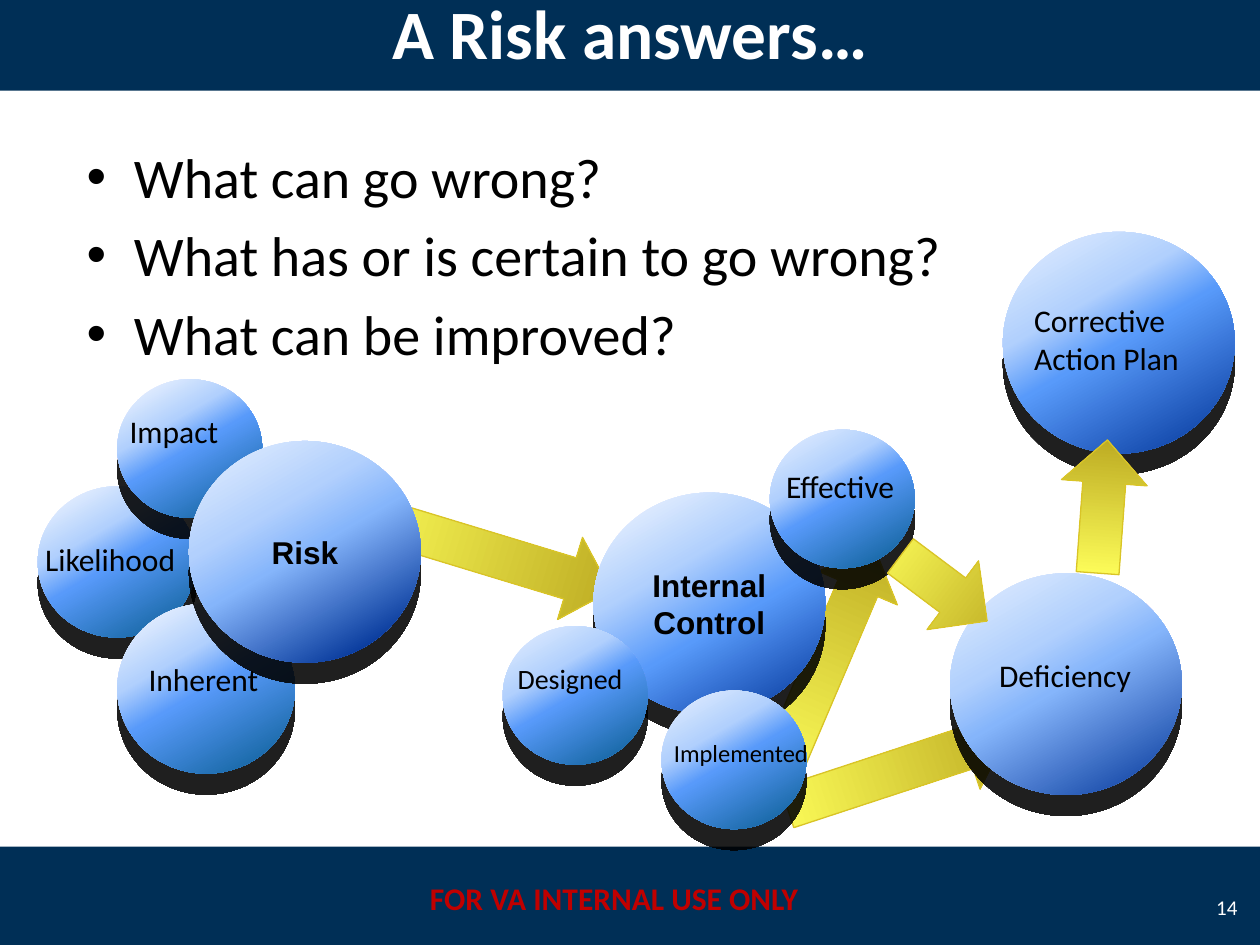
from dataclasses import dataclass

from lxml.etree import SubElement as Sub
from pptx import Presentation
from pptx.dml.color import RGBColor as RGB
from pptx.enum.shapes import MSO_SHAPE as Form
from pptx.enum.text import MSO_ANCHOR as Anchor, PP_ALIGN as Align
from pptx.oxml.ns import qn
from pptx.util import Pt


@dataclass(frozen=True)
class Theme:
    navy: str = "002F56"
    white: str = "FFFFFF"
    black: str = "000000"
    red: str = "C00000"
    edge: str = "D9C427"
    gold: tuple = ((0, "FFFF5B"), (100, "BAA820"))
    teal: tuple = ((6, "ECF3FE"), (33, "B1D0FD"), (50, "589AFA"), (100, "075B8F"))
    sky: tuple = ((6, "DEEBFE"), (33, "B1D0FD"), (50, "589AFA"), (100, "075B8F"))
    risk: tuple = ((6, "DEEBFE"), (33, "B2D0FD"), (50, "85B5FB"), (90, "003296"))
    guard: tuple = ((5, "ECF3FE"), (34, "B1D0FD"), (58, "589AFA"), (100, "003296"))
    flaw: tuple = ((5, "DEEBFE"), (34, "B1D0FD"), (50, "85B5FB"), (100, "003296"))
    plan: tuple = ((5, "DEEBFE"), (33, "B1D0FD"), (50, "589AFA"), (100, "003296"))
    sans: str = "Calibri"
    bold: str = "Arial"
    head: float = 39.6
    list: float = 32
    text: float = 18
    mid: float = 16
    small: float = 14
    page: float = 12


class Deck:
    """Draws each kind of element on the current slide in one theme."""

    def __init__(self, theme):
        self.look = theme
        self.show = Presentation()
        self.show.slide_width, self.show.slide_height = Pt(720), Pt(540)
        self.slide = self.show.slides.add_slide(self.show.slide_layouts[6])

    def shape(self, form, *area):
        item = self.slide.shapes.add_shape(form, *map(Pt, area))
        item.shadow.inherit = False
        item.line.fill.background()
        return item

    def blend(self, item, stops, angle):
        grad = item.fill._xPr.makeelement(qn("a:gradFill"), {"rotWithShape": "1"})
        row = Sub(grad, qn("a:gsLst"))
        for spot, tint in stops:
            stop = Sub(row, qn("a:gs"), pos=str(spot * 1000))
            Sub(stop, qn("a:srgbClr"), val=tint)
        Sub(grad, qn("a:lin"), ang=str(angle * 60000), scaled="0")
        item.element.spPr.insert(2, grad)

    def band(self, top):
        item = self.shape(Form.RECTANGLE, 0, top, 720, 57.6)
        item.fill.solid()
        item.fill.fore_color.rgb = RGB.from_string(self.look.navy)

    def ball(self, left, top, wide, high, stops, lines=()):
        item = self.shape(Form.OVAL, left, top, wide, high)
        self.blend(item, stops, 60)
        cast = Sub(item.element.spPr.find(qn("a:effectLst")), qn("a:outerShdw"),
                   blurRad="0", dist=str(Pt(12)), dir="5400000", rotWithShape="0")
        tone = Sub(cast, qn("a:srgbClr"), val=self.look.black)
        Sub(tone, qn("a:alpha"), val="87000")
        if lines:
            self.fill(item, lines, self.look.text, bold=True, font=self.look.bold,
                      align=Align.CENTER, anchor=Anchor.MIDDLE)

    def arrow(self, left, top, high, turn):
        item = self.shape(Form.UP_ARROW, left, top, 49, high)
        item.rotation = turn
        self.blend(item, self.look.gold, 270)
        item.line.color.rgb = RGB.from_string(self.look.edge)
        item.line.width = Pt(0.75)

    def label(self, area, lines, size, **style):
        self.fill(self.slide.shapes.add_textbox(*map(Pt, area)), lines, size, **style)

    def fill(self, item, lines, size, tint=None, bold=False, font=None,
             align=Align.LEFT, anchor=Anchor.TOP, dots=False):
        frame = item.text_frame
        frame.word_wrap = True
        frame.vertical_anchor = anchor
        for rank, line in enumerate(lines):
            para = frame.paragraphs[0] if rank == 0 else frame.add_paragraph()
            para.text = line
            para.alignment = align
            if rank and dots:
                para.space_before = Pt(size / 5)
            if dots:
                prop = para._p.get_or_add_pPr()
                prop.set("marL", str(Pt(27)))
                prop.set("indent", str(Pt(-27)))
                Sub(prop, qn("a:buFont"), typeface=self.look.bold)
                Sub(prop, qn("a:buChar"), char="•")
            para.font.name = font or self.look.sans
            para.font.size = Pt(size)
            para.font.bold = bold
            para.font.color.rgb = RGB.from_string(tint or self.look.black)


def main():
    look = Theme()
    deck = Deck(look)
    large, small = (132.5, 126.7), (82.8, 79.2)

    for top in (483.8, -5.8):
        deck.band(top)
    deck.label((234, 499, 234, 28.8), ["FOR VA INTERNAL USE ONLY"], look.text,
               tint=look.red, bold=True, align=Align.CENTER)

    for spec in ((449.3, 308.2, 132.5, 23.1), (488.2, 374.4, 132.5, 71.8),
                 (252.7, 240.5, 150.5, 106.9)):
        deck.arrow(*spec)
    for area in ((21.6, 277.9, 90.7, 86.4), (67, 344.9, 101.5, 97.2),
                 (67, 216.7, *small)):
        deck.ball(*area, look.teal)

    deck.label((42.5, 77.8, 648, 356.4),
               ["What can go wrong?", "What has or is certain to go wrong?",
                "What can be improved?"], look.list, dots=True)
    deck.label((684, 504, 30.2, 28.8), ["14"], look.page, tint=look.white,
               align=Align.RIGHT, anchor=Anchor.MIDDLE)
    deck.label((0, -5.8, 720, 48.2), ["A Risk answers…"], look.head, tint=look.white,
               bold=True, align=Align.CENTER, anchor=Anchor.MIDDLE)

    deck.ball(108, 252, *large, look.risk, ["Risk"])
    deck.ball(339.1, 281.5, *large, look.guard, ["Internal", "Control"])
    for spot in ((287.3, 357.8), (378, 394.6), (439.9, 245.5)):
        deck.ball(*spot, *small, look.sky)
    deck.ball(542.9, 327.6, *large, look.flaw)
    deck.ball(573.1, 132.5, *large, look.plan)
    for spec in ((514.8, 305.3, 61.9, 126.9), (605.5, 251.3, 76.3, 4.2)):
        deck.arrow(*spec)

    for area, text, size in (
        ((67, 231.8, 67, 28.8), "Impact", look.text),
        ((18.7, 305.3, 90.7, 28.8), "Likelihood", look.text),
        ((77.8, 373.7, 84.2, 28.8), "Inherent", look.text),
        ((583.9, 168.5, 112.3, 51.1), "Corrective Action Plan", look.text),
        ((563.8, 371.5, 111.6, 28.8), "Deficiency", look.text),
        ((288.7, 374.4, 78.5, 26.6), "Designed", look.mid),
        ((378, 418.3, 93.6, 24.5), "Implemented", look.small),
        ((442.1, 263.5, 94.3, 28.8), "Effective", look.text),
    ):
        deck.label(area, [text], size)
    deck.show.save("out.pptx")


if __name__ == "__main__":
    main()
